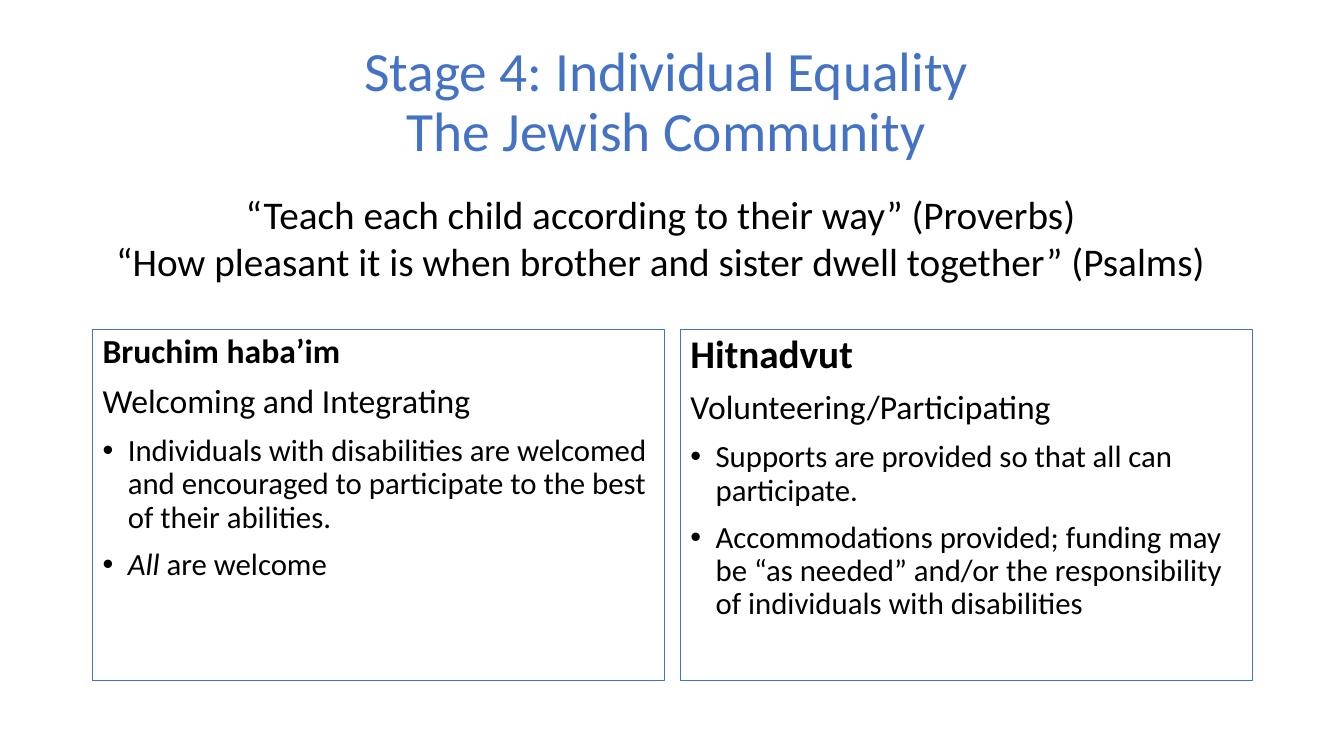
from dataclasses import dataclass

from lxml import etree
from pptx import Presentation
from pptx.dml.color import RGBColor
from pptx.enum.shapes import MSO_SHAPE
from pptx.enum.text import MSO_ANCHOR, MSO_AUTO_SIZE, PP_ALIGN
from pptx.oxml.ns import qn
from pptx.slide import Slide
from pptx.util import Inches, Pt

RECTANGLE = MSO_SHAPE.RECTANGLE
TOP, MIDDLE = MSO_ANCHOR.TOP, MSO_ANCHOR.MIDDLE
LEFT, CENTER = PP_ALIGN.LEFT, PP_ALIGN.CENTER
NO_FIT = MSO_AUTO_SIZE.NONE
TITLE_ONLY = 5

COLORS = {"accent": "4472C4", "text": "000000"}
FONT = "Calibri"

# Grid in inches: two columns with a gutter
SLIDE_WIDTH, SLIDE_HEIGHT = 13.33, 7.5
MARGIN, CONTENT_WIDTH, GUTTER = 0.92, 11.5, 0.16
COLUMN_WIDTH = (CONTENT_WIDTH - GUTTER) / 2
CARD_TOP, CARD_HEIGHT = 3.27, 3.48
BULLET_INDENT = 0.25


@dataclass(frozen=True)
class Run:
    text: str
    size: float
    bold: bool = False
    italic: bool = False
    color: str = "text"


@dataclass(frozen=True)
class Line:
    runs: tuple[Run, ...]
    bullet: bool = False


@dataclass(frozen=True)
class Card:
    column: int
    lines: tuple[Line, ...]


TITLE = Line((Run("Stage 4: Individual Equality \vThe Jewish Community ", 39.6, color="accent"),))
QUOTES = tuple(Line((Run(text, 28),)) for text in (
    "“Teach each child according to their way” (Proverbs)",
    "“How pleasant it is when brother and sister dwell together” (Psalms)",
))
CARDS = (
    Card(0, (
        Line((Run("Bruchim haba’im", 24, bold=True),)),
        Line((Run("Welcoming and Integrating", 24),)),
        Line((Run("Individuals with disabilities are welcomed and encouraged "
                  "to participate to the best of their abilities.", 22),), bullet=True),
        Line((Run("All", 22, italic=True), Run(" are welcome", 22)), bullet=True),
    )),
    Card(1, (
        Line((Run("Hitnadvut", 28, bold=True),)),
        Line((Run("Volunteering/Participating", 24),)),
        Line((Run("Supports are provided so that all can participate.", 22),), bullet=True),
        Line((Run("Accommodations provided; funding may be “as needed” and/or "
                  "the responsibility of individuals with disabilities", 22),), bullet=True),
    )),
)


def apply_format(target, values: dict) -> None:
    for name, value in values.items():
        setattr(target, name, value)


def place(shape, left: float, top: float, width: float, height: float) -> None:
    apply_format(shape, {"left": Inches(left), "top": Inches(top),
                         "width": Inches(width), "height": Inches(height)})


def add_bullet(paragraph) -> None:
    properties = paragraph._p.get_or_add_pPr()
    properties.set("marL", str(Inches(BULLET_INDENT)))
    properties.set("indent", str(-Inches(BULLET_INDENT)))
    etree.SubElement(properties, qn("a:buFont")).set("typeface", "Arial")
    etree.SubElement(properties, qn("a:buChar")).set("char", "•")


def write_lines(shape, lines: tuple[Line, ...], anchor, paragraph_format: dict) -> None:
    frame = shape.text_frame
    apply_format(frame, {"word_wrap": True, "auto_size": NO_FIT, "vertical_anchor": anchor})
    for index, line in enumerate(lines):
        paragraph = frame.add_paragraph() if index else frame.paragraphs[0]
        apply_format(paragraph, paragraph_format)
        if line.bullet:
            add_bullet(paragraph)
        for part in line.runs:
            # A vertical tab in the text becomes a line break
            for position, text in enumerate(part.text.split("\v")):
                if position:
                    paragraph.add_line_break()
                run = paragraph.add_run()
                run.text = text
                apply_format(run.font, {"name": FONT, "size": Pt(part.size),
                                        "bold": part.bold, "italic": part.italic})
                run.font.color.rgb = RGBColor.from_string(COLORS[part.color])


def add_title(slide: Slide) -> None:
    title = slide.shapes.title
    place(title, MARGIN, 0.4, CONTENT_WIDTH, 1.25)
    write_lines(title, (TITLE,), MIDDLE, {"alignment": CENTER, "line_spacing": 0.9})


def add_quotes(slide: Slide) -> None:
    box = slide.shapes.add_textbox(0, 0, 0, 0)
    place(box, 0.8, 1.84, CONTENT_WIDTH, 1.72)
    write_lines(box, QUOTES, TOP, {"alignment": CENTER})


def add_card(slide: Slide, card: Card) -> None:
    shape = slide.shapes.add_shape(RECTANGLE, 0, 0, 0, 0)
    left = MARGIN + card.column * (COLUMN_WIDTH + GUTTER)
    place(shape, left, CARD_TOP, COLUMN_WIDTH, CARD_HEIGHT)
    shape.shadow.inherit = False
    shape.fill.background()
    shape.line.color.rgb = RGBColor.from_string(COLORS["accent"])
    shape.line.width = Pt(0.75)
    write_lines(shape, card.lines, TOP,
                {"alignment": LEFT, "line_spacing": 0.9, "space_before": Pt(10)})


def main() -> None:
    presentation = Presentation()
    apply_format(presentation, {"slide_width": Inches(SLIDE_WIDTH),
                                "slide_height": Inches(SLIDE_HEIGHT)})
    slide = presentation.slides.add_slide(presentation.slide_layouts[TITLE_ONLY])

    # Heading, quotations and the two columns
    add_title(slide)
    add_quotes(slide)
    for card in CARDS:
        add_card(slide, card)

    presentation.save("out.pptx")


if __name__ == "__main__":
    main()
